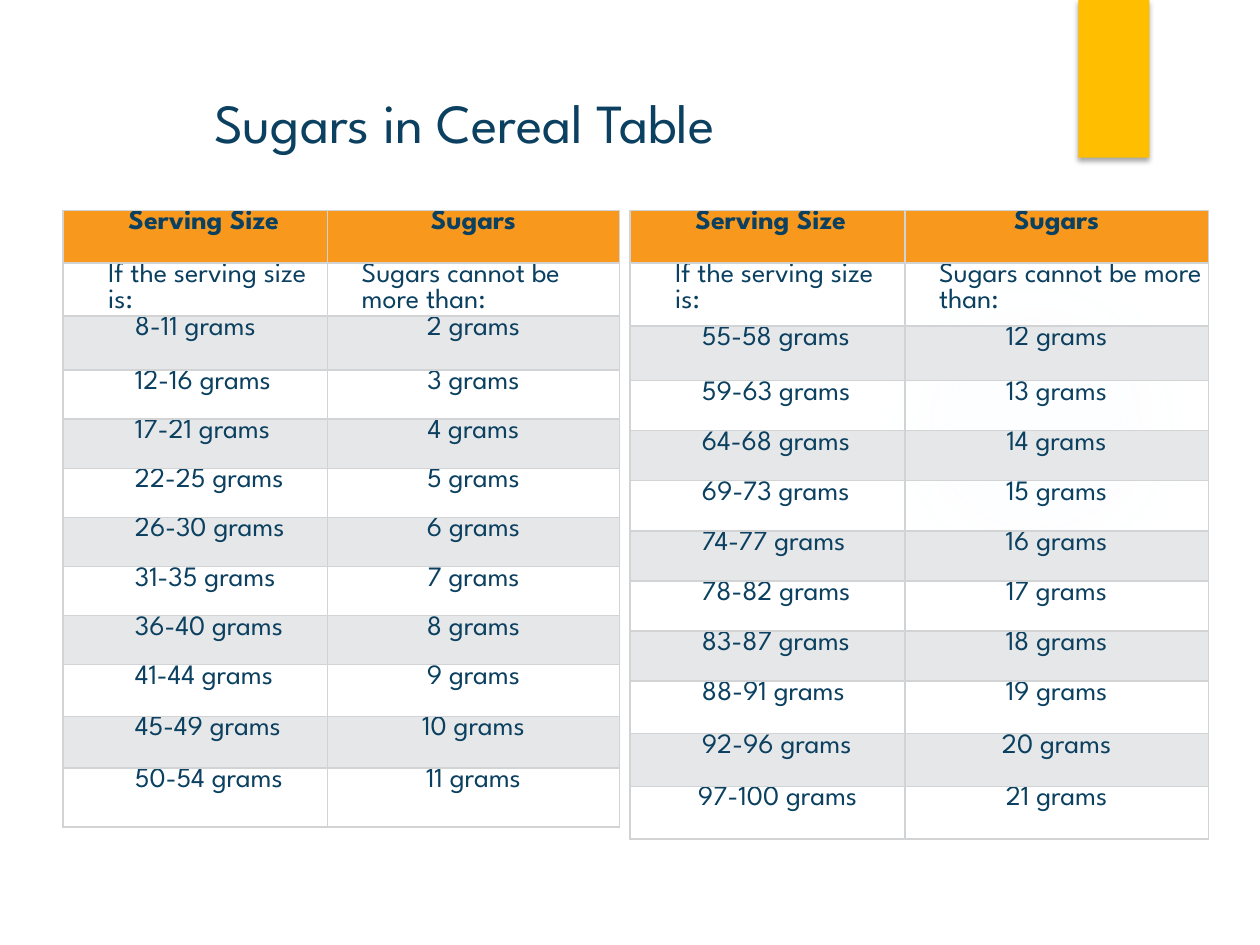
import lxml.etree
import pptx
import pptx.dml.color
import pptx.enum.shapes
import pptx.enum.text
import pptx.oxml
import pptx.oxml.ns
import pptx.util

Cm = pptx.util.Cm
Pt = pptx.util.Pt
RGB = pptx.dml.color.RGBColor.from_string
PP_ALIGN = pptx.enum.text.PP_ALIGN
SHAPE = pptx.enum.shapes.MSO_SHAPE
NS = pptx.oxml.ns.nsdecls("a")


class Theme:
    font = "League Spartan"
    text = "0B4060"
    header = "F8991D"
    band = "E6E7E8"
    border = "D1D3D4"
    tab = "FFBF00"
    glow = "E4F3FC"
    title_size = Pt(31.5)
    cell_size = Pt(16)


def style_text(tf, size, bold=False):
    for p in tf.paragraphs:
        for r in p.runs:
            r.font.name = Theme.font
            r.font.size = size
            r.font.bold = bold
            r.font.color.rgb = RGB(Theme.text)


def indent(p, left):
    pPr = p._p.get_or_add_pPr()
    pPr.set("marL", str(Cm(left)))
    pPr.set("indent", "0")


prs = pptx.Presentation()
prs.slide_width = Cm(25.4)
prs.slide_height = Cm(19.05)
s = prs.slides.add_slide(prs.slide_layouts[5])

glow = s.shapes.add_shape(SHAPE.OVAL, Cm(17.93), Cm(4.65), Cm(5.87), Cm(7.82))
glow.shadow.inherit = False
glow.line.fill.background()
glow.fill.background()
spPr = glow._element.spPr
stops = "".join(
    f'<a:gs pos="{pos}000"><a:srgbClr val="{Theme.glow}"><a:alpha val="{alpha}000"/></a:srgbClr></a:gs>'
    for pos, alpha in ((0, 7), (36, 6), (69, 0))
)
spPr.replace(spPr.find(pptx.oxml.ns.qn("a:noFill")), pptx.oxml.parse_xml(
    f'<a:gradFill {NS}><a:gsLst>{stops}</a:gsLst><a:path path="circle">'
    '<a:fillToRect l="50000" t="50000" r="50000" b="50000"/></a:path></a:gradFill>'
))

tab = s.shapes.add_shape(SHAPE.RECTANGLE, Cm(21.74), 0, Cm(1.43), Cm(3.18))
tab.fill.solid()
tab.fill.fore_color.rgb = RGB(Theme.tab)
tab.line.fill.background()
tab._element.spPr.append(pptx.oxml.parse_xml(
    f'<a:effectLst {NS}><a:outerShdw blurRad="{Pt(3.1)}" dist="{Pt(1.8)}" dir="5400000" rotWithShape="0">'
    '<a:srgbClr val="000000"><a:alpha val="35000"/></a:srgbClr></a:outerShdw></a:effectLst>'
))

title = s.shapes.title
title.left, title.top, title.width, title.height = Cm(1.27), Cm(1.27), Cm(19.66), Cm(2.34)
tf = title.text_frame
tf.text = "Sugars in Cereal Table"
tf.vertical_anchor = pptx.enum.text.MSO_ANCHOR.MIDDLE
tf.paragraphs[0].alignment = PP_ALIGN.LEFT
indent(tf.paragraphs[0], 2.79)
style_text(tf, Theme.title_size)

tables = [
    (1.27, (5.33, 5.89), [1.06, 1.07, 1.09] + [0.99] * 6 + [1.04, 1.04, 1.19], 2,
     ["8-11", "12-16", "17-21", "22-25", "26-30", "31-35", "36-40", "41-44", "45-49", "50-54"]),
    (12.7, (5.54, 6.12), [1.06, 1.27, 1.1] + [1.01] * 6 + [1.06] * 3, 12,
     ["55-58", "59-63", "64-68", "69-73", "74-77", "78-82", "83-87", "88-91", "92-96", "97-100"]),
]

for left, widths, heights, first_sugar, servings in tables:
    rows = [("Serving Size", "Sugars"), ("If the serving size is:", "Sugars cannot be more than:")]
    rows += [(f"{size} grams", f"{sugar} grams") for sugar, size in enumerate(servings, first_sugar)]
    frame = s.shapes.add_table(len(rows), 2, Cm(left), Cm(4.24), Cm(sum(widths)), Cm(sum(heights)))
    table = frame.table
    table.first_row = False
    table.horz_banding = False
    for column, width in zip(table.columns, widths):
        column.width = Cm(width)
    for i, (row, height, values) in enumerate(zip(table.rows, heights, rows)):
        row.height = Cm(height)
        for j, (cell, value) in enumerate(zip(row.cells, values)):
            cell.margin_left = cell.margin_right = cell.margin_top = cell.margin_bottom = 0
            tf = cell.text_frame
            tf.text = value
            p = tf.paragraphs[0]
            if j == 1 and i != 1:
                p.alignment = PP_ALIGN.CENTER
            elif i == 1:
                indent(p, (0.91, 0.69)[j])
            elif i == 0:
                indent(p, 1.32)
            else:
                indent(p, 1.37 if value.startswith("97") else 1.45)
            style_text(tf, Theme.cell_size, bold=i == 0)
            tcPr = cell._tc.get_or_add_tcPr()
            for side in "LRTB":
                tcPr.append(pptx.oxml.parse_xml(
                    f'<a:ln{side} {NS} w="{Pt(1)}"><a:solidFill><a:srgbClr val="{Theme.border}"/>'
                    f'</a:solidFill></a:ln{side}>'
                ))
            if i % 2:
                cell.fill.background()
            else:
                cell.fill.solid()
                cell.fill.fore_color.rgb = RGB(Theme.band if i else Theme.header)

prs.save("out.pptx")
